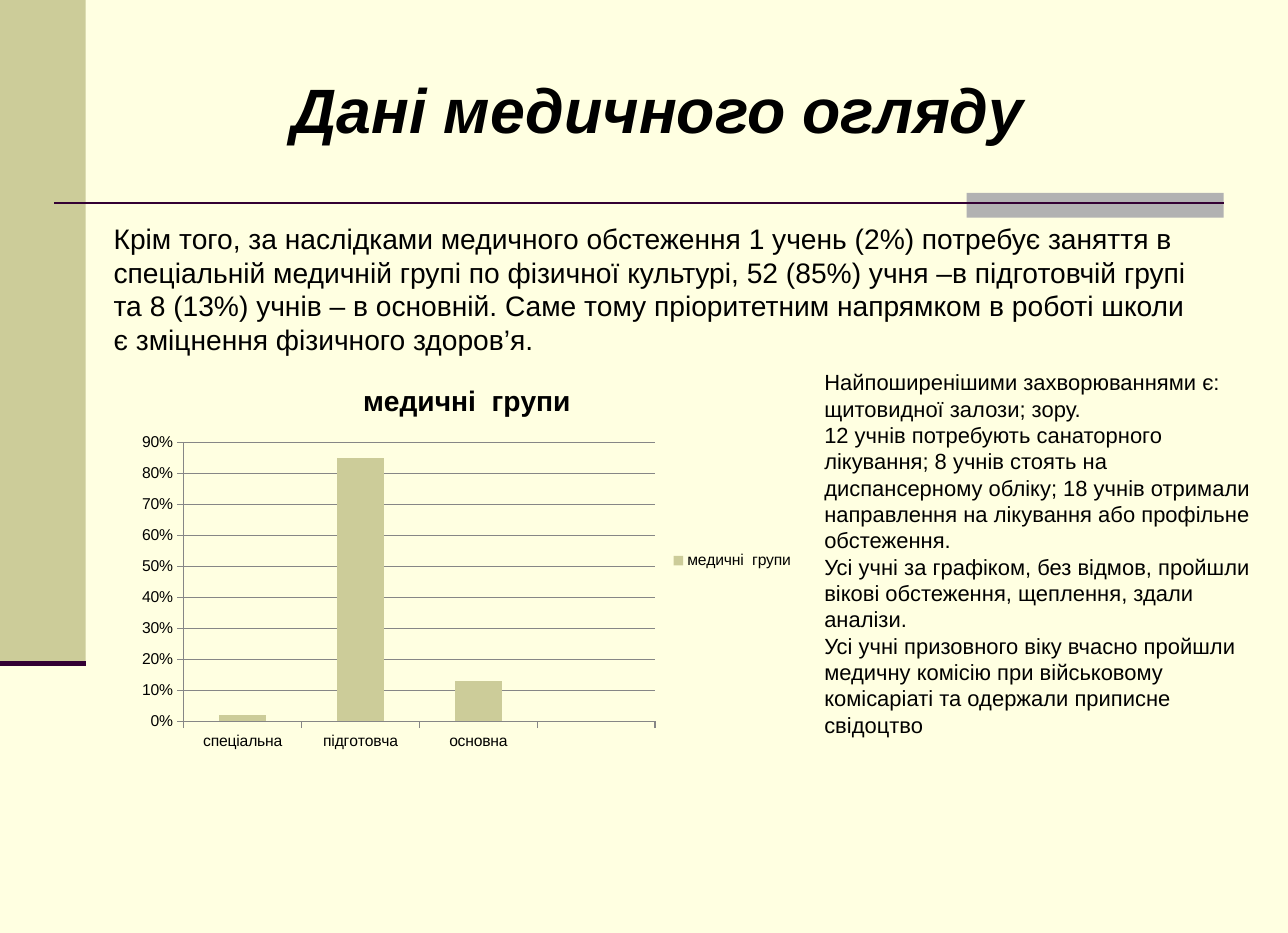
from lxml.etree import SubElement
from pptx import Presentation
from pptx.chart.data import CategoryChartData
from pptx.dml.color import RGBColor
from pptx.enum.chart import XL_CHART_TYPE, XL_LEGEND_POSITION, XL_TICK_MARK
from pptx.enum.shapes import MSO_CONNECTOR, MSO_SHAPE
from pptx.enum.text import MSO_ANCHOR, PP_ALIGN
from pptx.oxml.ns import qn
from pptx.util import Inches, Pt

COLORS = {"background": "FFFFE1", "olive": "CCCC99", "gray": "B2B2B2",
          "plum": "330033", "text": "000000", "grid": "868686"}
FONT = "Arial"
TITLE = "Дані медичного огляду"
INTRO = ["Крім того, за наслідками медичного обстеження 1 учень (2%) потребує заняття в "
         "спеціальній медичній групі по фізичної культурі, 52 (85%) учня –в підготовчій групі "
         "та 8 (13%) учнів – в основній. Саме тому пріоритетним напрямком в роботі школи "
         "є зміцнення фізичного здоров’я."]
DETAILS = ["Найпоширенішими захворюваннями є:",
           "щитовидної залози; зору.",
           "12 учнів потребують санаторного лікування; 8 учнів стоять на диспансерному обліку; "
           "18 учнів отримали направлення на лікування або профільне обстеження.",
           "Усі учні за графіком, без відмов, пройшли вікові обстеження, щеплення, здали аналізи.",
           "Усі учні призовного віку вчасно пройшли медичну комісію при військовому "
           "комісаріаті та одержали приписне свідоцтво"]
GROUPS_NAME = "медичні  групи"
GROUPS = {"спеціальна": 0.02, "підготовча": 0.85, "основна": 0.13, "": None}


def rgb(name):
    """Return the named colour."""
    return RGBColor.from_string(COLORS[name])


def style_font(font, size, bold=False, italic=False):
    """Apply the slide's font and text colour."""
    font.name, font.size, font.bold, font.italic = FONT, Pt(size), bold, italic
    font.color.rgb = rgb("text")


def add_block(s, x, y, w, h, color):
    """Add a plain filled rectangle."""
    sp = s.shapes.add_shape(MSO_SHAPE.RECTANGLE, Inches(x), Inches(y), Inches(w), Inches(h))
    sp.shadow.inherit = False
    sp.fill.solid()
    sp.fill.fore_color.rgb = rgb(color)
    sp.line.fill.background()


def add_rule(s, x, y, w, width):
    """Add a horizontal plum rule."""
    line = s.shapes.add_connector(MSO_CONNECTOR.STRAIGHT, Inches(x), Inches(y),
                                  Inches(x + w), Inches(y))
    line.line.color.rgb = rgb("plum")
    line.line.width = Pt(width)
    SubElement(line._element.spPr, qn("a:effectLst"))


def add_side_strip(s, x, y, w, h):
    """Add the side strip with a rule along its bottom."""
    add_block(s, x, y, w, h, "olive")
    add_rule(s, x, y + h, w, 3.5)


def add_divider(s, x, y, w, h):
    """Add the title divider with a gray block at its right end."""
    block = 2.28
    add_block(s, x + w - block, y, block, h, "gray")
    add_rule(s, x, y + 0.09, w, 1.5)


def add_title(s, x, y, w, h):
    """Place and format the title placeholder."""
    sp = s.shapes.title
    sp.left, sp.top, sp.width, sp.height = map(Inches, (x, y, w, h))
    tf = sp.text_frame
    tf.text = TITLE
    tf.vertical_anchor = MSO_ANCHOR.MIDDLE
    p = tf.paragraphs[0]
    p.alignment = PP_ALIGN.CENTER
    style_font(p.runs[0].font, 40, bold=True, italic=True)


def add_text(s, x, y, w, h, lines, size):
    """Add a wrapped text box with one paragraph per line."""
    tf = s.shapes.add_textbox(Inches(x), Inches(y), Inches(w), Inches(h)).text_frame
    tf.word_wrap = True
    tf.text = "\n".join(lines)
    for p in tf.paragraphs:
        style_font(p.runs[0].font, size)


def add_groups_chart(s, x, y, w, h):
    """Add the column chart of medical groups."""
    data = CategoryChartData(number_format="0%")
    data.categories = list(GROUPS)
    data.add_series(GROUPS_NAME, list(GROUPS.values()))
    chart = s.shapes.add_chart(XL_CHART_TYPE.COLUMN_CLUSTERED, Inches(x), Inches(y),
                               Inches(w), Inches(h), data).chart
    style_font(chart.font, 10)
    chart.has_title = True
    tf = chart.chart_title.text_frame
    tf.text = GROUPS_NAME
    style_font(tf.paragraphs[0].runs[0].font, 18, bold=True)
    chart.chart_title.include_in_layout = False
    chart.has_legend = True
    chart.legend.position = XL_LEGEND_POSITION.RIGHT
    chart.legend.include_in_layout = False

    plot = chart.plots[0]
    plot.gap_width = 150
    plot.vary_by_categories = False
    fill = plot.series[0].format.fill
    fill.solid()
    fill.fore_color.rgb = rgb("olive")

    values = chart.value_axis
    values.minimum_scale, values.maximum_scale, values.major_unit = 0, 0.9, 0.1
    values.tick_labels.number_format = "0%"
    values.tick_labels.number_format_is_linked = False
    values.has_major_gridlines = True
    for axis in (chart.category_axis, values):
        axis.major_tick_mark = XL_TICK_MARK.OUTSIDE
    for part in (chart.category_axis, values, values.major_gridlines):
        part.format.line.color.rgb = rgb("grid")
        part.format.line.width = Pt(0.75)


def build_slide(prs):
    """Build the medical examination slide."""
    s = prs.slides.add_slide(prs.slide_layouts[5])
    s.background.fill.solid()
    s.background.fill.fore_color.rgb = rgb("background")
    add_side_strip(s, 0, 0, 0.76, 5.88)
    add_divider(s, 0.48, 1.71, 10.37, 0.22)
    add_title(s, 0.67, 0.58, 10.32, 0.77)
    add_text(s, 0.91, 1.91, 9.84, 1.31, INTRO, 18)
    add_groups_chart(s, 1.14, 3.22, 6, 3.5)
    add_text(s, 7.21, 3.22, 4.05, 3.4, DETAILS, 14)


def main():
    """Create and save the presentation."""
    prs = Presentation()
    prs.slide_width, prs.slide_height = Inches(11.42), Inches(8.27)
    build_slide(prs)
    prs.save("out.pptx")


if __name__ == "__main__":
    main()
